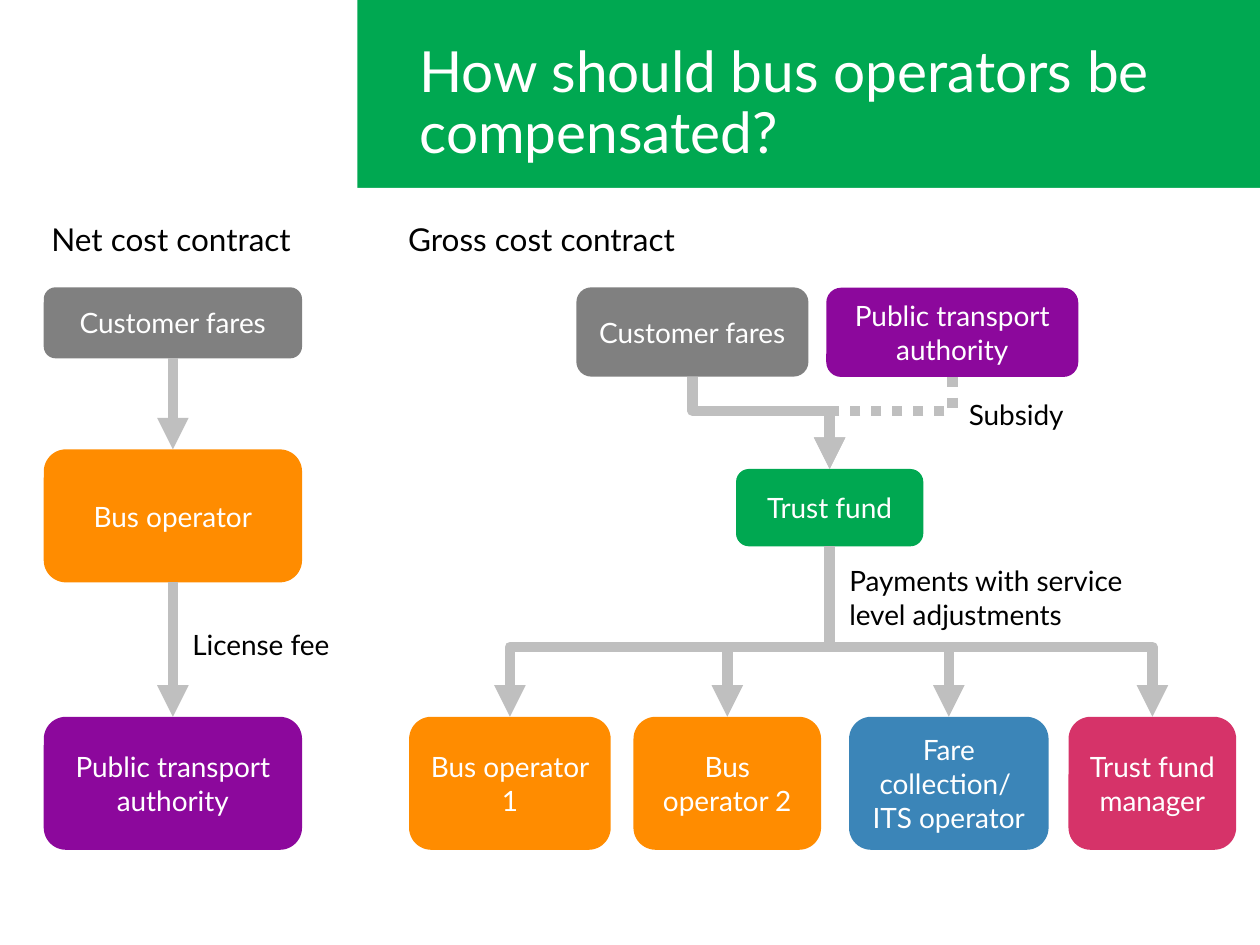
from lxml import etree
from pptx import Presentation
from pptx import util as u
from pptx.dml.color import RGBColor
from pptx.enum import dml, shapes, text
from pptx.oxml import ns

WHITE = RGBColor(0xFF, 0xFF, 0xFF)
BLACK = RGBColor(0x00, 0x00, 0x00)
GREEN = RGBColor(0x00, 0xA8, 0x51)
GRAY = RGBColor(0x80, 0x80, 0x80)
LINE_GRAY = RGBColor(0xBF, 0xBF, 0xBF)
ORANGE = RGBColor(0xFF, 0x8C, 0x00)
PURPLE = RGBColor(0x8C, 0x08, 0x9C)
BLUE = RGBColor(0x3B, 0x85, 0xB8)
PINK = RGBColor(0xD6, 0x33, 0x69)

SITE_TOP, SITE_BOTTOM = 0, 2


class FlowSlide:
    font = "Lato"
    body_size = 16
    line_width = 6

    def __init__(self, slide):
        self.slide = slide

    def add_text(self, frame, content, size, color, align=None, spacing=None):
        """Fill a text frame; a newline in the content is a line break."""
        frame.word_wrap = True
        paragraph = frame.paragraphs[0]
        paragraph.alignment = align
        paragraph.line_spacing = spacing
        for index, line in enumerate(content.split("\n")):
            if index:
                paragraph.add_line_break()
            run = paragraph.add_run()
            run.text = line
            run.font.name = self.font
            run.font.size = u.Pt(size)
            run.font.color.rgb = color

    def block(self, kind, left, top, width, height, fill):
        shape = self.slide.shapes.add_shape(
            kind, u.Pt(left), u.Pt(top), u.Pt(width), u.Pt(height))
        shape.shadow.inherit = False
        shape.fill.solid()
        shape.fill.fore_color.rgb = fill
        shape.line.fill.background()
        return shape

    def panel(self, left, top, width, height):
        return self.block(shapes.MSO_SHAPE.RECTANGLE, left, top, width, height, WHITE)

    def box(self, content, left, top, width, height, fill):
        shape = self.block(
            shapes.MSO_SHAPE.ROUNDED_RECTANGLE, left, top, width, height, fill)
        shape.text_frame.vertical_anchor = text.MSO_ANCHOR.MIDDLE
        self.add_text(shape.text_frame, content, self.body_size, WHITE,
                      text.PP_ALIGN.CENTER)
        return shape

    def label(self, content, left, top, width, height, size=body_size, color=BLACK,
              anchor=text.MSO_ANCHOR.TOP, spacing=None):
        shape = self.slide.shapes.add_textbox(
            u.Pt(left), u.Pt(top), u.Pt(width), u.Pt(height))
        shape.text_frame.vertical_anchor = anchor
        self.add_text(shape.text_frame, content, size, color, spacing=spacing)

    def arrow(self, source, target, bend=None, dotted=False):
        """Join bottom to top; bend is the share of the drop before the turn."""
        kind = shapes.MSO_CONNECTOR.STRAIGHT if bend is None else shapes.MSO_CONNECTOR.ELBOW
        connector = self.slide.shapes.add_connector(kind, 0, 0, 0, 0)
        connector.begin_connect(source, SITE_BOTTOM)
        connector.end_connect(target, SITE_TOP)
        connector.line.color.rgb = LINE_GRAY
        connector.line.width = u.Pt(self.line_width)
        if dotted:
            connector.line.dash_style = dml.MSO_LINE.ROUND_DOT
        properties = connector.element.spPr
        etree.SubElement(properties.find(ns.qn("a:ln")), ns.qn("a:tailEnd"),
                         type="triangle")
        etree.SubElement(properties, ns.qn("a:effectLst"))
        if bend is not None:
            self.turn_down(connector, bend)

    @staticmethod
    def turn_down(connector, bend):
        """Rotate an elbow so that it leaves and arrives vertically."""
        run = connector.end_x - connector.begin_x
        drop = connector.end_y - connector.begin_y
        center_x = (connector.begin_x + connector.end_x) // 2
        center_y = (connector.begin_y + connector.end_y) // 2
        connector.width, connector.height = drop, abs(run)
        connector.left = center_x - drop // 2
        connector.top = center_y - abs(run) // 2
        properties = connector.element.spPr
        frame = properties.find(ns.qn("a:xfrm"))
        frame.attrib.pop("flipH", None)
        frame.set("rot", str((270 if run > 0 else 90) * 60000))
        if run > 0:
            frame.set("flipH", "1")
        adjustments = properties.find(ns.qn("a:prstGeom")).find(ns.qn("a:avLst"))
        etree.SubElement(adjustments, ns.qn("a:gd"), name="adj1",
                         fmla=f"val {round(bend * 100000)}")


def draw_net_contract(flow):
    left, width = 25, 147.6
    flow.label("Net cost contract", 22.3, 122.4, 203.8, 28.8, size=18)
    fares = flow.box("Customer fares", left, 164.2, width, 40.6, GRAY)
    operator = flow.box("Bus operator", left, 256.8, width, 76, ORANGE)
    authority = flow.box("Public transport authority", left, 409.6, width, 76, PURPLE)
    flow.arrow(fares, operator)
    flow.arrow(operator, authority)
    flow.label("License fee", 102.8, 355, 99.6, 26.6)


def draw_gross_contract(flow):
    flow.label("Gross cost contract", 226.2, 122.4, 299.5, 28.8, size=18)
    fares = flow.box("Customer fares", 329.4, 164.2, 132.6, 51, GRAY)
    authority = flow.box("Public transport authority", 472.2, 164.4, 144, 51, PURPLE)
    fund = flow.box("Trust fund", 420.6, 268, 107, 44.2, GREEN)
    flow.arrow(authority, fund, bend=0.37, dotted=True)
    flow.arrow(fares, fund, bend=0.37)
    flow.label("Subsidy", 546.5, 223.7, 137.5, 26.6)
    flow.label("Payments with service level adjustments", 478.2, 318.6, 206, 46)
    recipients = [
        ("Bus operator 1", 233.8, 115.2, ORANGE),
        ("Bus operator 2", 362, 107.2, ORANGE),
        ("Fare collection/ \nITS operator", 485.2, 114, BLUE),
        ("Trust fund manager", 610.6, 95.8, PINK),
    ]
    for content, left, width, fill in recipients:
        flow.arrow(fund, flow.box(content, left, 409.6, width, 76, fill), bend=0.59)


def main():
    presentation = Presentation()
    presentation.slide_width, presentation.slide_height = u.Pt(720), u.Pt(540)
    slide = presentation.slides.add_slide(presentation.slide_layouts[6])
    slide.background.fill.solid()
    slide.background.fill.fore_color.rgb = GREEN
    flow = FlowSlide(slide)
    flow.panel(0, 0, 204.2, 108.5)
    flow.panel(0, 107.3, 720, 432.7)
    flow.label("How should bus operators be compensated?", 232.6, 28.5, 459.4, 62.6,
               size=32.4, color=WHITE, anchor=text.MSO_ANCHOR.MIDDLE, spacing=0.9)
    draw_net_contract(flow)
    draw_gross_contract(flow)
    presentation.save("out.pptx")


if __name__ == "__main__":
    main()
